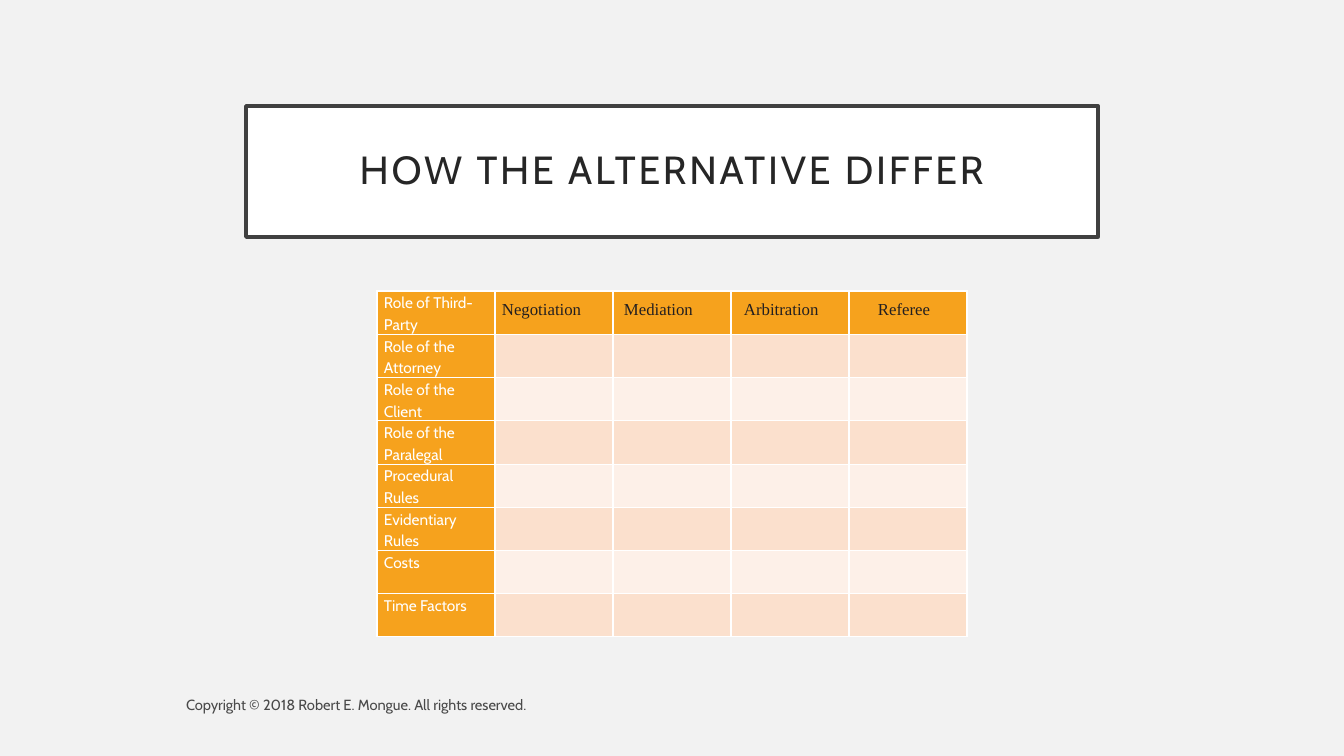
import pptx
import pptx.dml.color
import pptx.enum.shapes
import pptx.enum.text
import pptx.oxml
import pptx.oxml.ns
import pptx.util
import lxml.etree

ANCHOR = pptx.enum.text.MSO_ANCHOR
ALIGN = pptx.enum.text.PP_ALIGN
ORANGE, PEACH, CREAM, WHITE = "F6A21D", "FBE0CD", "FDF0E8", "FFFFFF"
ROW_LABELS = [
    "Role of Third-Party", "Role of the Attorney", "Role of the Client",
    "Role of the Paralegal", "Procedural Rules", "Evidentiary Rules",
    "Costs", "Time Factors",
]
METHODS = {"Negotiation": 206, "Mediation": 328, "Arbitration": 448, "Referee": 582}


def px(length):
    return pptx.util.Inches(length / 100.8)


def rgb(value):
    return pptx.dml.color.RGBColor.from_string(value)


def assign(target, values):
    for name, value in values.items():
        setattr(target, name, value)


def margins(horizontal, vertical):
    return {"margin_left": px(horizontal), "margin_right": px(horizontal),
            "margin_top": px(vertical), "margin_bottom": px(vertical)}


def child(parent, tag, **attributes):
    element = lxml.etree.SubElement(parent, pptx.oxml.ns.qn(tag))
    for name, value in attributes.items():
        element.set(name, str(value))
    return element


class SlideBuilder:
    """Hold the current slide and its text style, and add elements to it."""

    def __init__(self, presentation, background, font="Cabin"):
        self.slide = presentation.slides.add_slide(presentation.slide_layouts[6])
        self.slide.background.fill.solid()
        self.slide.background.fill.fore_color.rgb = rgb(background)
        self.font = font

    def add_words(self, frame, text, size, color, font=None, spacing=0, **paragraph_format):
        paragraph = frame.paragraphs[0]
        assign(paragraph, paragraph_format)
        run = paragraph.add_run()
        run.text = text
        assign(run.font, {"size": pptx.util.Pt(size), "name": font or self.font})
        run.font.color.rgb = rgb(color)
        if spacing:
            run._r.get_or_add_rPr().set("spc", str(spacing * 100))
        return paragraph

    def title(self, text, left, top, width, height):
        shape = self.slide.shapes.add_shape(
            pptx.enum.shapes.MSO_SHAPE.RECTANGLE, px(left), px(top), px(width), px(height))
        shape.shadow.inherit = False
        shape.fill.solid()
        shape.fill.fore_color.rgb = rgb(WHITE)
        shape.line.color.rgb = rgb("404040")
        shape.line.width = pptx.util.Pt(2.5)
        assign(shape.text_frame, {"word_wrap": True, "vertical_anchor": ANCHOR.MIDDLE,
                                  **margins(20, 20)})
        self.add_words(shape.text_frame, text, 28, "262626", spacing=2,
                       alignment=ALIGN.CENTER, line_spacing=0.9)

    def text(self, text, left, top, width, height, size, color, font=None, tabs=()):
        shape = self.slide.shapes.add_textbox(px(left), px(top), px(width), px(height))
        assign(shape.text_frame, {"word_wrap": True, "vertical_anchor": ANCHOR.MIDDLE,
                                  **margins(10, 5)})
        paragraph = self.add_words(shape.text_frame, text, size, color, font)
        if tabs:
            tab_list = child(paragraph._p.get_or_add_pPr(), "a:tabLst")
            for position in tabs:
                child(tab_list, "a:tab", pos=int(px(position)), algn="l")

    def border(self, cell):
        properties = cell._tc.get_or_add_tcPr()
        for side in ("a:lnL", "a:lnR", "a:lnT", "a:lnB"):
            line = child(properties, side, w=int(pptx.util.Pt(1)))
            child(child(line, "a:solidFill"), "a:srgbClr", val=WHITE)

    def table(self, labels, columns, left, top, column_width, row_height):
        table = self.slide.shapes.add_table(
            len(labels), columns, px(left), px(top),
            px(columns * column_width), px(len(labels) * row_height)).table
        assign(table, {"first_row": False, "horz_banding": False})
        for column in table.columns:
            column.width = px(column_width)
        for row_index, label in enumerate(labels):
            table.rows[row_index].height = px(row_height)
            for column_index in range(columns):
                cell = table.cell(row_index, column_index)
                assign(cell, margins(7, 0))
                self.border(cell)
                band = PEACH if row_index % 2 else CREAM
                cell.fill.solid()
                cell.fill.fore_color.rgb = rgb(
                    ORANGE if row_index == 0 or column_index == 0 else band)
            self.add_words(table.cell(row_index, 0).text_frame, label, 11, WHITE,
                           line_spacing=1.15)


def main():
    presentation = pptx.Presentation()
    assign(presentation, {"slide_width": px(1344), "slide_height": px(756)})
    builder = SlideBuilder(presentation, "F2F2F2")
    builder.title("HOW THE ALTERNATIVE DIFFER", 246, 106, 852, 131)
    builder.table(ROW_LABELS, len(METHODS) + 1, 377, 291, 118, 43)
    builder.text("\t" + "\t".join(METHODS), 286, 294, 661, 30, 12, "231F20",
                 "Times New Roman", METHODS.values())
    builder.text("Copyright © 2018 Robert E. Mongue. All rights reserved.",
                 176, 687, 650, 35, 10.5, "494949")
    presentation.save("out.pptx")


if __name__ == "__main__":
    main()
